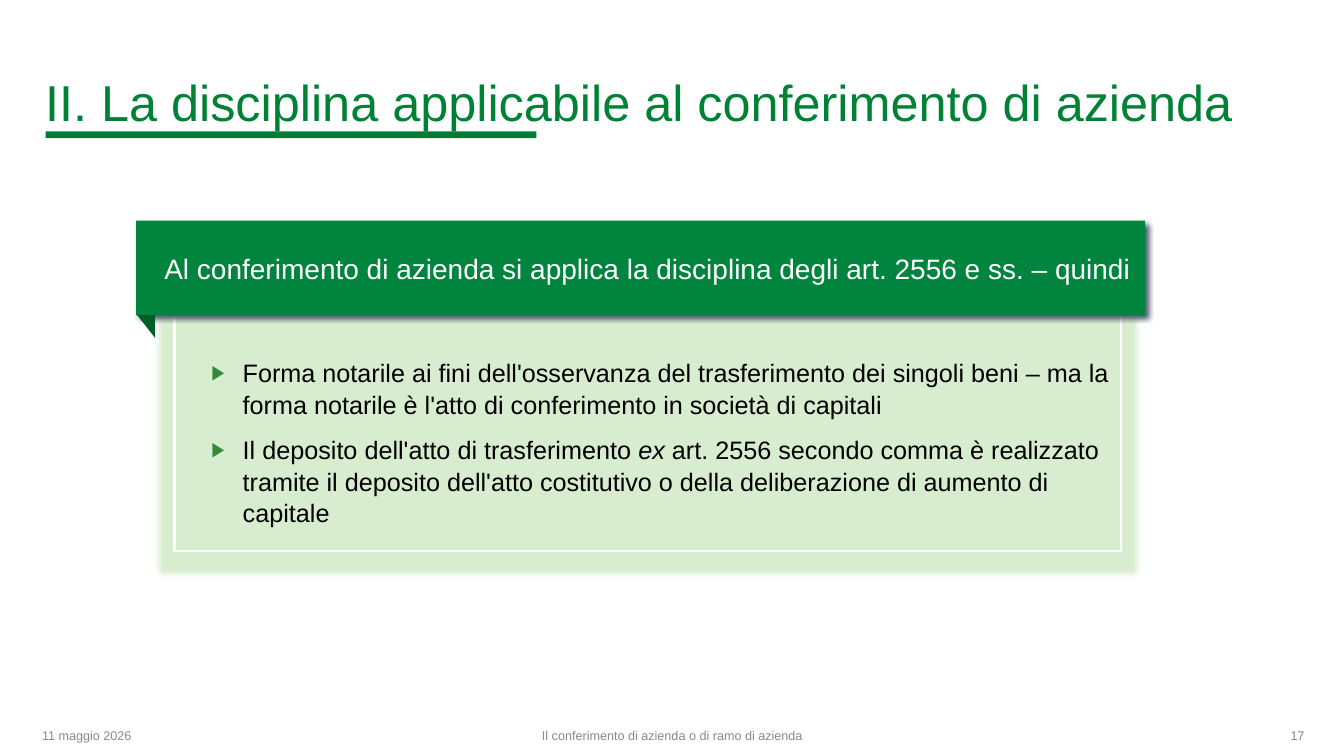
from dataclasses import dataclass
import lxml.etree
import pptx
import pptx.dml.color
import pptx.enum.shapes
import pptx.enum.text
import pptx.oxml.ns
import pptx.presentation
import pptx.shapes.autoshape
import pptx.slide
import pptx.text.text
import pptx.util

Pt = pptx.util.Pt
RGB = pptx.dml.color.RGBColor
Kind = pptx.enum.shapes.MSO_SHAPE
Align = pptx.enum.text.PP_ALIGN
Anchor = pptx.enum.text.MSO_ANCHOR
qn = pptx.oxml.ns.qn

TITLE = RGB(0x00, 0x82, 0x36)
RULE = RGB(0x00, 0x7D, 0x34)
BANNER = RGB(0x00, 0x84, 0x3E)
FOLD = RGB(0x00, 0x5E, 0x27)
PANEL = RGB(0xD8, 0xED, 0xCF)
MARK = RGB(0x34, 0x89, 0x3B)
SHADE = RGB(0x47, 0x58, 0x67)
GREY = RGB(0x89, 0x89, 0x89)
WHITE = RGB(0xFF, 0xFF, 0xFF)
BLACK = RGB(0x00, 0x00, 0x00)


@dataclass(frozen=True)
class Box:
    left: float
    top: float
    width: float
    height: float


@dataclass(frozen=True)
class Label:
    text: str
    box: Box
    size: float
    color: RGB
    align: Align = Align.LEFT
    anchor: Anchor = Anchor.MIDDLE


LABELS = [
    Label("II. La disciplina applicabile al conferimento di azienda",
          Box(25.2, 24.5, 925.2, 72.7), 36, TITLE, anchor=Anchor.BOTTOM),
    Label("11 maggio 2026", Box(23, 511.2, 216, 28.8), 9, GREY),
    Label("Il conferimento di azienda o di ramo di azienda",
          Box(318.2, 511.2, 324, 28.8), 9, GREY, Align.CENTER),
    Label("17", Box(722.9, 511.2, 216, 28.8), 9, GREY, Align.RIGHT),
]

# Each point is a list of (text, italic) parts.
POINTS = [
    [("Forma notarile ai fini dell'osservanza del trasferimento dei singoli beni – "
      "ma la forma notarile è l'atto di conferimento in società di capitali", False)],
    [("Il deposito dell'atto di trasferimento ", False),
     ("ex", True),
     (" art. 2556 secondo comma è realizzato tramite il deposito dell'atto "
      "costitutivo o della deliberazione di aumento di capitale", False)],
]


def place(box: Box) -> tuple[int, int, int, int]:
    return Pt(box.left), Pt(box.top), Pt(box.width), Pt(box.height)


def style(font: pptx.text.text.Font, size: float, color: RGB) -> None:
    font.name = "Arial"
    font.size = Pt(size)
    font.color.rgb = color


def add_shape(slide: pptx.slide.Slide, kind: Kind, box: Box,
              fill: RGB | None = None,
              line: RGB | None = None) -> pptx.shapes.autoshape.Shape:
    shape = slide.shapes.add_shape(kind, *place(box))
    shape.shadow.inherit = False
    if fill is None:
        shape.fill.background()
    else:
        shape.fill.solid()
        shape.fill.fore_color.rgb = fill
    if line is None:
        shape.line.fill.background()
    else:
        shape.line.color.rgb = line
        shape.line.width = Pt(1.5)
    return shape


def write(shape: pptx.shapes.autoshape.Shape, label: Label) -> None:
    frame = shape.text_frame
    frame.word_wrap = True
    frame.vertical_anchor = label.anchor
    frame.text = label.text
    para = frame.paragraphs[0]
    para.alignment = label.align
    style(para.runs[0].font, label.size, label.color)


def add_glow(shape: pptx.shapes.autoshape.Shape, tag: str,
             **attrs: int) -> lxml.etree._Element:
    """Add one effect to the shape's effect list."""
    effects = shape.element.spPr.find(qn("a:effectLst"))
    return lxml.etree.SubElement(
        effects, qn(tag), {key: str(val) for key, val in attrs.items()})


def add_mark(para: pptx.text.text._Paragraph) -> None:
    """Give the paragraph a green triangle bullet with a hanging indent."""
    props = para._p.get_or_add_pPr()
    props.set("marL", str(Pt(58.3)))
    props.set("indent", str(Pt(-22.3)))
    color = lxml.etree.SubElement(props, qn("a:buClr"))
    lxml.etree.SubElement(color, qn("a:srgbClr"), val=str(MARK))
    lxml.etree.SubElement(props, qn("a:buSzPct"), val="80000")
    lxml.etree.SubElement(props, qn("a:buFont"), typeface="Arial")
    lxml.etree.SubElement(props, qn("a:buChar"), char="▶")


def add_panel(slide: pptx.slide.Slide) -> None:
    panel = add_shape(slide, Kind.RECTANGLE, Box(108, 219.6, 709.9, 195.8), PANEL)
    add_glow(panel, "a:softEdge", rad=Pt(5))
    frame = panel.text_frame
    frame.word_wrap = True
    frame.vertical_anchor = Anchor.TOP
    frame.margin_top = Pt(35)
    for num, parts in enumerate(POINTS):
        para = frame.add_paragraph() if num else frame.paragraphs[0]
        para.alignment = Align.LEFT
        para.line_spacing = 1.04
        if num:
            para.space_before = Pt(10)
        add_mark(para)
        for text, slant in parts:
            run = para.add_run()
            run.text = text
            style(run.font, 18, BLACK)
            run.font.italic = slant
    add_shape(slide, Kind.RECTANGLE, Box(124.6, 198, 676.1, 195.8), line=WHITE)


def add_banner(slide: pptx.slide.Slide) -> None:
    box = Box(97.2, 157.7, 720.7, 67.7)
    banner = add_shape(slide, Kind.RECTANGLE, box, BANNER)
    shade = add_glow(banner, "a:outerShdw", blurRad=Pt(4), dist=Pt(3),
                     dir=45 * 60000, rotWithShape=0)
    lxml.etree.SubElement(shade, qn("a:srgbClr"), val=str(SHADE))
    write(banner, Label(
        "Al conferimento di azienda si applica la disciplina degli art. 2556 e ss. – quindi",
        box, 20, WHITE, Align.CENTER))
    banner.text_frame.margin_left = Pt(17.3)
    fold = add_shape(slide, Kind.RIGHT_TRIANGLE, Box(97.9, 224.9, 13, 16.6), FOLD)
    fold.rotation = 180


def main() -> None:
    deck = pptx.Presentation()
    deck.slide_width, deck.slide_height = Pt(960), Pt(540)
    slide = deck.slides.add_slide(deck.slide_layouts[6])
    add_shape(slide, Kind.RECTANGLE, Box(32.6, 93.8, 350.6, 5), RULE)
    for label in LABELS:
        write(slide.shapes.add_textbox(*place(label.box)), label)
    add_panel(slide)
    add_banner(slide)
    deck.save("out.pptx")


if __name__ == "__main__":
    main()
